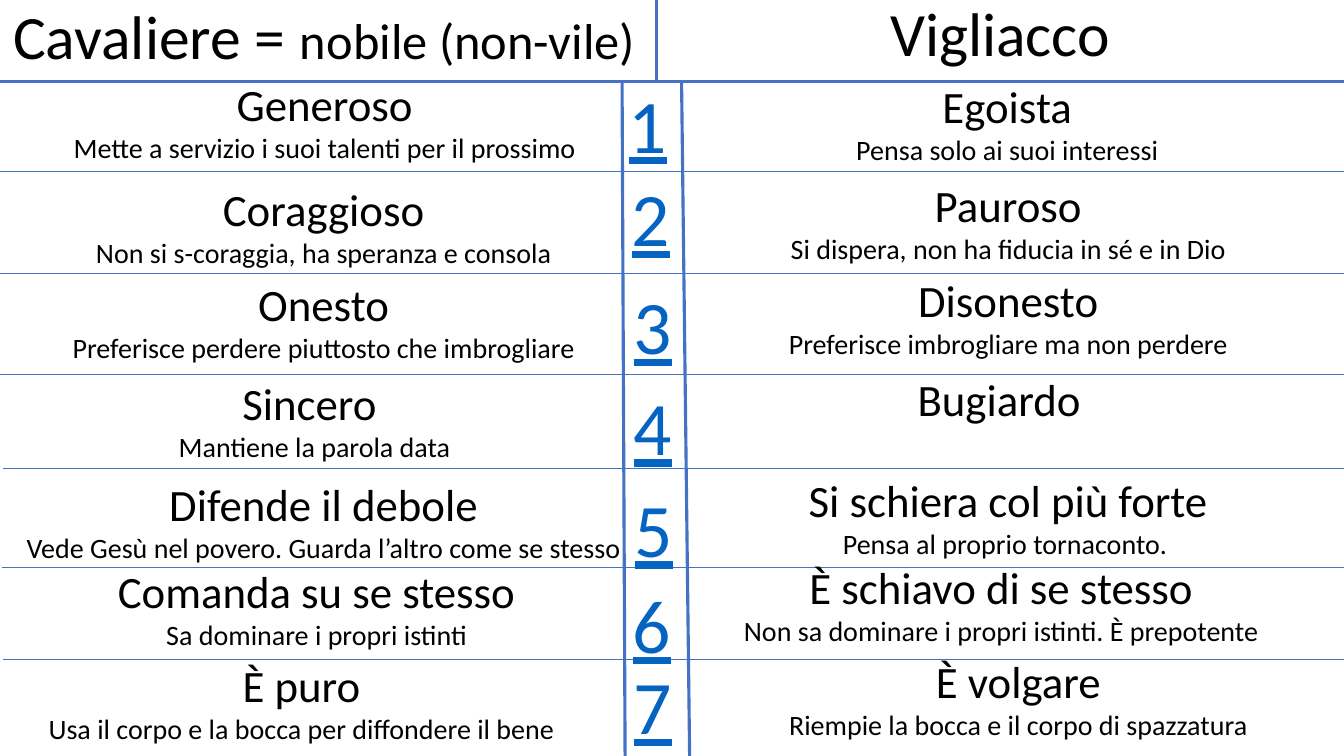
from dataclasses import dataclass

from lxml.etree import SubElement
from pptx import Presentation
from pptx.dml.color import RGBColor
from pptx.enum.shapes import MSO_CONNECTOR
from pptx.enum.text import MSO_ANCHOR, MSO_AUTO_SIZE, PP_ALIGN
from pptx.oxml.ns import qn
from pptx.shapes.base import BaseShape
from pptx.slide import Slide
from pptx.util import Inches, Pt


@dataclass(frozen=True)
class Theme:
    font: str = "Calibri"
    ink: str = "000000"
    link: str = "0563C1"
    rule: str = "4472C4"
    digit: int = 54
    head: int = 44
    sub: int = 36
    trait: int = 32
    note: int = 20
    thick: float = 2.25
    thin: float = 0.5


@dataclass(frozen=True)
class Rule:
    x1: float
    y1: float
    x2: float
    y2: float
    width: float


@dataclass(frozen=True)
class Trait:
    left: float
    top: float
    name: str
    note: str = ""


@dataclass(frozen=True)
class Digit:
    left: float
    top: float


THEME = Theme()
WIDE, HIGH = 13.33, 7.5
COL = 6.42

FRAME = [
    Rule(6.51, 0, 6.51, 0.81, THEME.thick),
    Rule(0, 0.81, WIDE, 0.81, THEME.thick),
    Rule(6.76, 0.81, 6.84, HIGH, THEME.thick),
    Rule(6.17, 0.8, 6.2, 7.57, THEME.thick),
]
ROWS = [
    Rule(x, y, x + WIDE, y, THEME.thin)
    for x, y in [(0, 1.7), (0, 2.71), (0, 3.71), (0.03, 4.65), (0.02, 5.63), (0.03, 6.54)]
]
DIGITS = [
    Digit(6.13, 0.72), Digit(6.16, 1.65), Digit(6.18, 2.72), Digit(6.18, 3.72),
    Digit(6.19, 4.73), Digit(6.17, 5.68), Digit(6.18, 6.49),
]
KNIGHT = [
    Trait(0.01, 0.71, "Generoso", "Mette a servizio i suoi talenti per il prossimo"),
    Trait(0, 1.75, "Coraggioso", "Non si s-coraggia, ha speranza e consola"),
    Trait(0, 2.7, "Onesto", "Preferisce perdere piuttosto che imbrogliare"),
    Trait(-0.09, 3.68, "Sincero ", "Mantiene la parola data"),
    Trait(0, 4.68, "Difende il debole", "Vede Gesù nel povero. Guarda l’altro come se stesso"),
    Trait(-0.07, 5.54, "Comanda su se stesso", "Sa dominare i propri istinti"),
    Trait(-0.22, 6.48, "È puro", "Usa il corpo e la bocca per diffondere il bene"),
]
COWARD = [
    Trait(6.78, 0.73, "Egoista", "Pensa solo ai suoi interessi"),
    Trait(6.79, 1.71, "Pauroso", "Si dispera, non ha fiducia in sé e in Dio"),
    Trait(6.79, 2.66, "Disonesto", "Preferisce imbrogliare ma non perdere"),
    Trait(6.7, 3.64, "Bugiardo"),
    Trait(6.79, 4.64, "Si schiera col più forte", "Pensa al proprio tornaconto. "),
    Trait(6.72, 5.5, "È schiavo di se stesso", "Non sa dominare i propri istinti. È prepotente"),
    Trait(6.89, 6.44, "È volgare", "Riempie la bocca e il corpo di spazzatura"),
]


def draw_rule(slide: Slide, rule: Rule) -> None:
    line = slide.shapes.add_connector(
        MSO_CONNECTOR.STRAIGHT,
        Inches(rule.x1), Inches(rule.y1), Inches(rule.x2), Inches(rule.y2),
    )
    line.line.color.rgb = RGBColor.from_string(THEME.rule)
    line.line.width = Pt(rule.width)
    SubElement(line._element.spPr, qn("a:effectLst"))


def add_box(slide: Slide, left: float, top: float, width: float, height: float) -> BaseShape:
    return slide.shapes.add_textbox(Inches(left), Inches(top), Inches(width), Inches(height))


def fill_text(
    box: BaseShape, lines: list[str], sizes: list[int], color: str = THEME.ink, wrap: bool = True
) -> None:
    """Write centred lines, one type size for each."""
    frame = box.text_frame
    frame.text = "\n".join(lines)
    frame.word_wrap = wrap
    frame.auto_size = MSO_AUTO_SIZE.SHAPE_TO_FIT_TEXT
    frame.vertical_anchor = MSO_ANCHOR.TOP
    for para, size in zip(frame.paragraphs, sizes):
        para.alignment = PP_ALIGN.CENTER
        for run in para.runs:
            run.font.name = THEME.font
            run.font.size = Pt(size)
            run.font.color.rgb = RGBColor.from_string(color)


def draw_heads(slide: Slide) -> None:
    title = slide.shapes.title
    title.left, title.top = Inches(0.03), Inches(-0.07)
    title.width, title.height = Inches(COL), Inches(0.84)
    fill_text(title, ["Cavaliere = "], [THEME.head])
    para = title.text_frame.paragraphs[0]
    para.alignment = PP_ALIGN.LEFT
    tail = para.add_run()
    tail.text = "nobile (non-vile)"
    tail.font.name = THEME.font
    tail.font.size = Pt(THEME.sub)
    tail.font.color.rgb = RGBColor.from_string(THEME.ink)
    fill_text(add_box(slide, 6.71, -0.1, COL, 0.84), ["Vigliacco"], [THEME.head])


def draw_digit(slide: Slide, digit: Digit, count: int) -> None:
    box = add_box(slide, digit.left, digit.top, 0.59, 1.01)
    fill_text(box, [str(count)], [THEME.digit], THEME.link, wrap=False)
    box.text_frame.paragraphs[0].runs[0].font.underline = True


def draw_trait(slide: Slide, trait: Trait) -> None:
    lines = [trait.name, trait.note] if trait.note else [trait.name]
    box = add_box(slide, trait.left, trait.top, COL, 0.98 if trait.note else 0.64)
    fill_text(box, lines, [THEME.trait, THEME.note])


def main() -> None:
    deck = Presentation()
    deck.slide_width, deck.slide_height = Inches(WIDE), Inches(HIGH)
    slide = deck.slides.add_slide(deck.slide_layouts.get_by_name("Title Only"))
    for rule in FRAME + ROWS:
        draw_rule(slide, rule)
    for count, digit in enumerate(DIGITS, 1):
        draw_digit(slide, digit, count)
    draw_heads(slide)
    for trait in KNIGHT + COWARD:
        draw_trait(slide, trait)
    deck.save("out.pptx")


if __name__ == "__main__":
    main()
